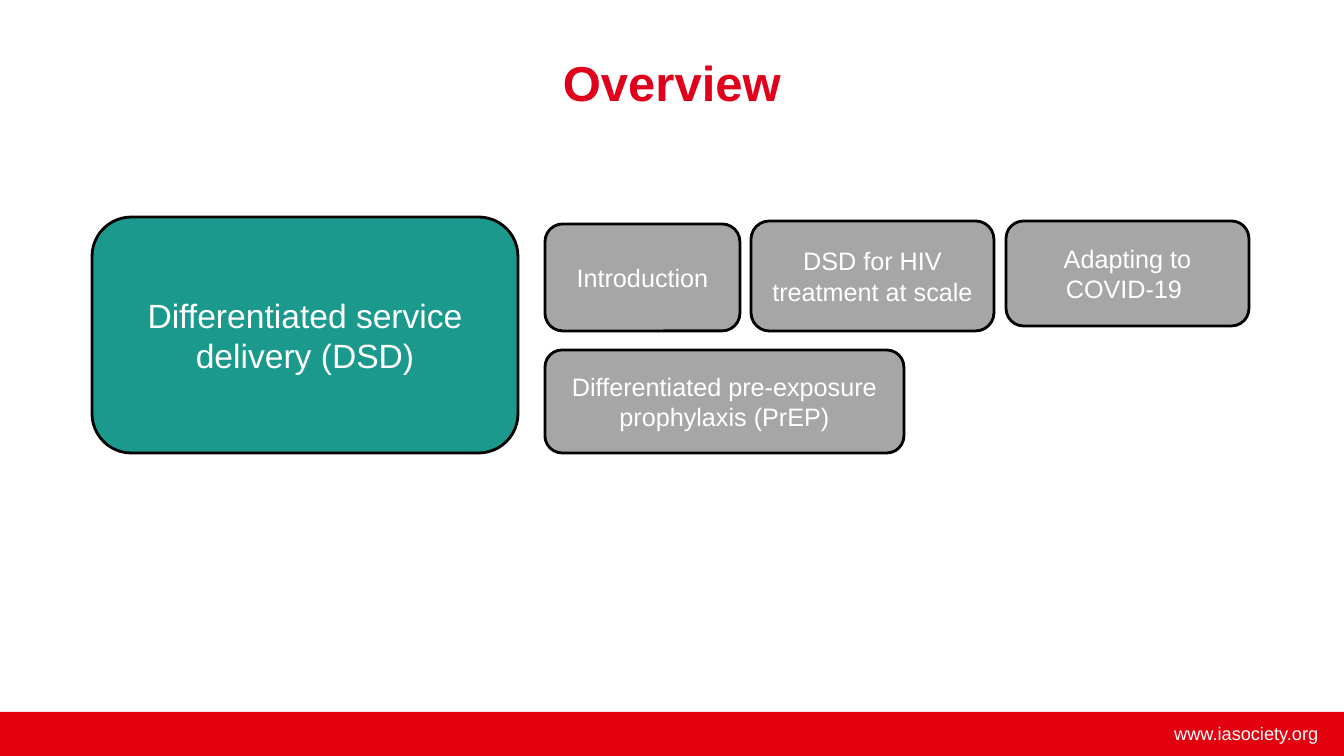
from pptx import Presentation
from pptx import util as u
from pptx.dml.color import RGBColor
from pptx.enum import shapes, text

PX = 914400 / 100.8
WIDTH, HEIGHT = 1344, 756
RED, TITLE_RED, TEAL, GREY = "E3000F", "E0001B", "1A998C", "A6A6A6"
WHITE, BLACK = "FFFFFF", "000000"


def px(*lengths):
    return [u.Emu(round(n * PX)) for n in lengths]


def paint(color_format, color):
    color_format.rgb = RGBColor.from_string(color)


def write(s, words, size, color=WHITE, bold=False,
          align=text.PP_ALIGN.CENTER, anchor=text.MSO_ANCHOR.MIDDLE):
    """Put one formatted paragraph into a shape."""
    tf = s.text_frame
    tf.word_wrap = True
    tf.vertical_anchor = anchor
    p = tf.paragraphs[0]
    p.alignment = align
    r = p.add_run()
    r.text = words
    for name, value in {"name": "Arial", "size": u.Pt(size), "bold": bold}.items():
        setattr(r.font, name, value)
    paint(r.font.color, color)


def add_panel(slide, kind, box, fill):
    s = slide.shapes.add_shape(kind, *px(*box))
    s.shadow.inherit = False
    s.fill.solid()
    paint(s.fill.fore_color, fill)
    s.line.fill.background()
    return s


def add_footer(slide, x, y, w, h):
    add_panel(slide, shapes.MSO_SHAPE.RECTANGLE, (x, y, w, h), RED)
    s = slide.shapes.add_textbox(*px(x + w - 293, y + 5, 277, 32))
    write(s, "www.iasociety.org", 13, align=text.PP_ALIGN.RIGHT,
          anchor=text.MSO_ANCHOR.TOP)


def place_title(slide, *box):
    s = slide.shapes.title
    s.left, s.top, s.width, s.height = px(*box)
    write(s, "Overview", 35, TITLE_RED, bold=True)


def add_topic(slide, words, box, fill=GREY, size=18):
    s = add_panel(slide, shapes.MSO_SHAPE.ROUNDED_RECTANGLE, box, fill)
    paint(s.line.color, BLACK)
    s.line.width = u.Pt(2)
    write(s, words, size)


def add_overview(slide, x, y, w, h):
    """Main theme on the left, its topics in two rows on the right."""
    theme_w, prep_h = 426, 103
    add_topic(slide, "Differentiated service delivery (DSD)",
              (x, y, theme_w, h), TEAL, 24)
    left = x + theme_w + 27
    wide = 243
    last = x + w - wide
    topics = [
        ("Introduction", (left, y + 7, 195, 107)),
        ("DSD for HIV treatment at scale", (last - 12 - wide, y + 4, wide, 110)),
        ("Adapting to COVID-19 ", (last, y + 4, wide, 105)),
        ("Differentiated pre-exposure prophylaxis (PrEP)",
         (left, y + h - prep_h, 359, prep_h)),
    ]
    for words, box in topics:
        add_topic(slide, words, box)


def main():
    prs = Presentation()
    prs.slide_width, prs.slide_height = px(WIDTH, HEIGHT)
    slide = prs.slides.add_slide(prs.slide_layouts[5])
    add_footer(slide, 0, 712, WIDTH, 44)
    place_title(slide, 168, 0, 1008, 163)
    add_overview(slide, 92, 217, 1157, 236)
    prs.save("out.pptx")


if __name__ == "__main__":
    main()
